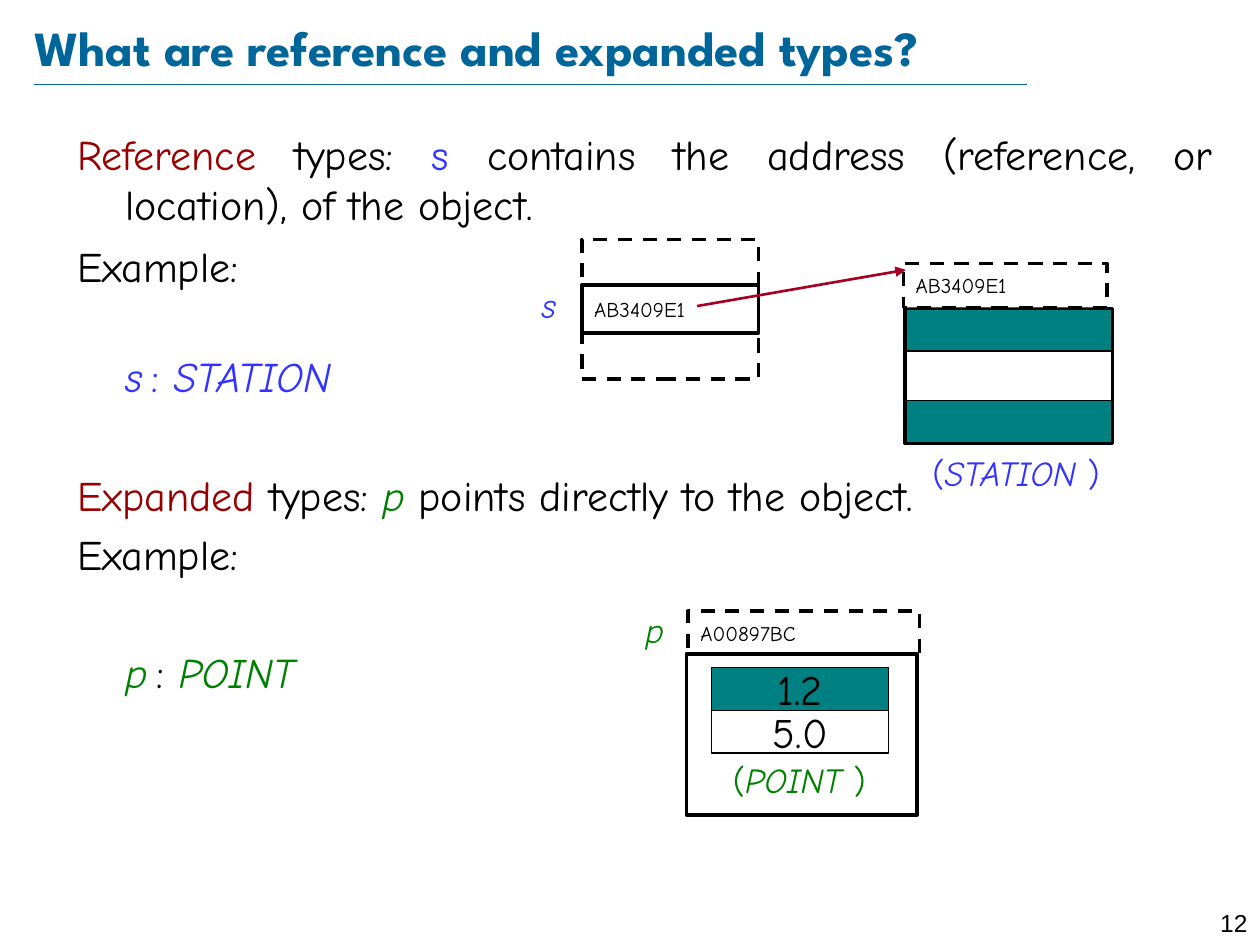
"""Build a slide that contrasts reference types with expanded types."""
import pptx
import pptx.util
import pptx.dml.color
import pptx.enum.dml
import pptx.enum.shapes
import pptx.enum.text
import pptx.oxml.ns
from lxml import etree

Cm, Pt = pptx.util.Cm, pptx.util.Pt
Align = pptx.enum.text.PP_ALIGN
Anchor = pptx.enum.text.MSO_ANCHOR
HUES = {
    "title": "006699", "key": "990000", "ref": "3333FF", "exp": "008000",
    "gap": "006400", "field": "008080", "arrow": "A50021",
    "ink": "000000", "paper": "FFFFFF",
}
FONT = "Comic Neue"


def hue(name):
    return pptx.dml.color.RGBColor.from_string(HUES[name])


def style(run, size, color="ink", italic=False, name=FONT, bold=False):
    font = run.font
    font.size, font.name = Pt(size), name
    font.bold, font.italic = bold, italic
    font.color.rgb = hue(color)


def place(shape, left, top, width, height):
    shape.left, shape.top = Cm(left), Cm(top)
    shape.width, shape.height = Cm(width), Cm(height)


def write(para, parts, size):
    """Fill a paragraph from (text, color, italic[, size]) parts."""
    for text, color, italic, *own in parts:
        run = para.add_run()
        run.text = text
        style(run, own[0] if own else size, color, italic)


def add_title(slide, text):
    title = slide.shapes.title
    place(title, 0.69, 0.33, 22.07, 1.22)
    frame = title.text_frame
    frame.text = text
    frame.auto_size = pptx.enum.text.MSO_AUTO_SIZE.NONE
    frame.vertical_anchor = Anchor.MIDDLE
    frame.margin_left = frame.margin_right = 0
    frame.margin_top = frame.margin_bottom = 0
    para = frame.paragraphs[0]
    para.alignment = Align.LEFT
    style(para.runs[0], 28, "title", name="League Spartan", bold=True)


def add_body(slide, items):
    """Fill the body from (space before, is code, parts) items."""
    body = slide.placeholders[1]
    place(body, 1.3, 2.46, 23.39, 15.27)
    frame = body.text_frame
    frame.auto_size = pptx.enum.text.MSO_AUTO_SIZE.NONE
    for i, (gap, code, parts) in enumerate(items):
        para = frame.add_paragraph() if i else frame.paragraphs[0]
        props = para._p.get_or_add_pPr()
        props.set("marL", str(Cm(0.97)))
        props.set("indent", "0" if code else str(-Cm(0.97)))
        etree.SubElement(props, pptx.oxml.ns.qn("a:buNone"))
        para.alignment = Align.LEFT if i else Align.JUSTIFY
        para.space_before = Pt(gap)
        write(para, parts, 24)


def add_box(slide, area, fill="paper", width=2, dash=False, text="",
            size=12, align=Align.LEFT):
    kind = pptx.enum.shapes.MSO_SHAPE.RECTANGLE
    box = slide.shapes.add_shape(kind, *map(Cm, area))
    box.shadow.inherit = False
    if fill:
        box.fill.solid()
        box.fill.fore_color.rgb = hue(fill)
    else:
        box.fill.background()
    box.line.color.rgb = hue("ink")
    box.line.width = Pt(width)
    if dash:
        box.line.dash_style = pptx.enum.dml.MSO_LINE.DASH
    if text:
        frame = box.text_frame
        frame.text = text
        frame.margin_top = frame.margin_bottom = 0
        frame.vertical_anchor = Anchor.MIDDLE
        frame.paragraphs[0].alignment = align
        style(frame.paragraphs[0].runs[0], size)


def add_label(slide, area, parts, align):
    frame = slide.shapes.add_textbox(*map(Cm, area)).text_frame
    frame.word_wrap = True
    para = frame.paragraphs[0]
    para.alignment = align
    write(para, parts, 20)


def add_line(slide, ends, color, width, head=False):
    kind = pptx.enum.shapes.MSO_CONNECTOR.STRAIGHT
    line = slide.shapes.add_connector(kind, *map(Cm, ends))
    line.line.color.rgb = hue(color)
    line.line.width = Pt(width)
    qn = pptx.oxml.ns.qn
    if head:
        tip = etree.SubElement(line.line._get_or_add_ln(), qn("a:tailEnd"))
        tip.set("type", "triangle")
    etree.SubElement(line._element.spPr, qn("a:effectLst"))


def add_page(slide, text):
    box = slide.shapes.add_textbox(Cm(24), Cm(18.19), Cm(1.4), Cm(0.61))
    box.text_frame.text = text
    para = box.text_frame.paragraphs[0]
    para.alignment = Align.RIGHT
    style(para.runs[0], 14, name="Arial")


def name_type(name, color):
    return [("(", color, False), (name + " ", color, True),
            (")", color, False)]


def draw_ref(slide):
    """Draw the cell s and the object it refers to."""
    left, wide = 18.24, 4.19
    add_box(slide, (left, 8.08, wide, 0.84), "field", 0.75)
    add_box(slide, (left, 6.22, wide, 0.86), "field", 0.75)
    add_box(slide, (left, 6.22, wide, 2.72), None)
    for row in (0, 2, 1):
        here = row == 1
        add_box(slide, (11.73, 4.83 + 0.92 * row, 3.56, 0.97),
                dash=not here, text="AB3409E1" if here else "")
    add_box(slide, (18.21, 5.31, 4.11, 0.89), dash=True, text="AB3409E1")
    add_line(slide, (14.05, 6.17, 18.26, 5.44), "arrow", 1.5, True)
    add_label(slide, (10.34, 5.59, 1.12, 1.12), [("s", "ref", True)],
              Align.RIGHT)
    add_label(slide, (17.96, 8.97, 5.05, 1.12),
              name_type("STATION", "ref"), Align.CENTER)


def draw_exp(slide):
    """Draw the object p with its two fields."""
    add_box(slide, (13.87, 12.32, 4.67, 0.89), dash=True, text="A00897BC")
    add_box(slide, (13.84, 13.18, 4.65, 3.25))
    for row, (text, fill) in enumerate([("1.2", "field"), ("5.0", "paper")]):
        add_box(slide, (14.35, 13.46 + 0.86 * row, 3.57, 0.86), fill, 0.75,
                text=text, size=24, align=Align.CENTER)
    add_label(slide, (12.52, 12.14, 1.12, 1.09), [("p", "exp", True)],
              Align.RIGHT)
    add_label(slide, (14.3, 15.16, 3.63, 1.12),
              name_type("POINT", "exp"), Align.CENTER)


def main():
    deck = pptx.Presentation()
    deck.slide_width, deck.slide_height = Cm(25.4), Cm(19.05)
    slide = deck.slides.add_slide(deck.slide_layouts[1])
    add_line(slide, (0.69, 1.7, 20.7, 1.7), "title", 0.25)
    add_page(slide, "12")
    add_title(slide, "What are reference and expanded types?")
    case = [("Example:", "ink", False)]
    add_body(slide, [
        (0, False, [
            ("Reference", "key", False), (" types: ", "ink", False),
            ("s", "ref", False),
            (" contains the address (reference, or location), "
             "of the object.", "ink", False)]),
        (6.4, False, case),
        (34.4, True, [
            ("s", "ref", True), (" ", "ref", True, 16),
            (": ", "ref", False), ("STATION", "ref", True)]),
        (39, False, [
            ("Expanded ", "key", False), ("types: ", "ink", False),
            ("p ", "exp", True),
            ("points directly to the object.", "ink", False)]),
        (4.8, False, case),
        (38.5, True, [
            ("p", "exp", True), (" ", "gap", True, 16),
            (": ", "ink", False), ("POINT", "exp", True)]),
    ])
    draw_ref(slide)
    draw_exp(slide)
    deck.save("out.pptx")


if __name__ == "__main__":
    main()
